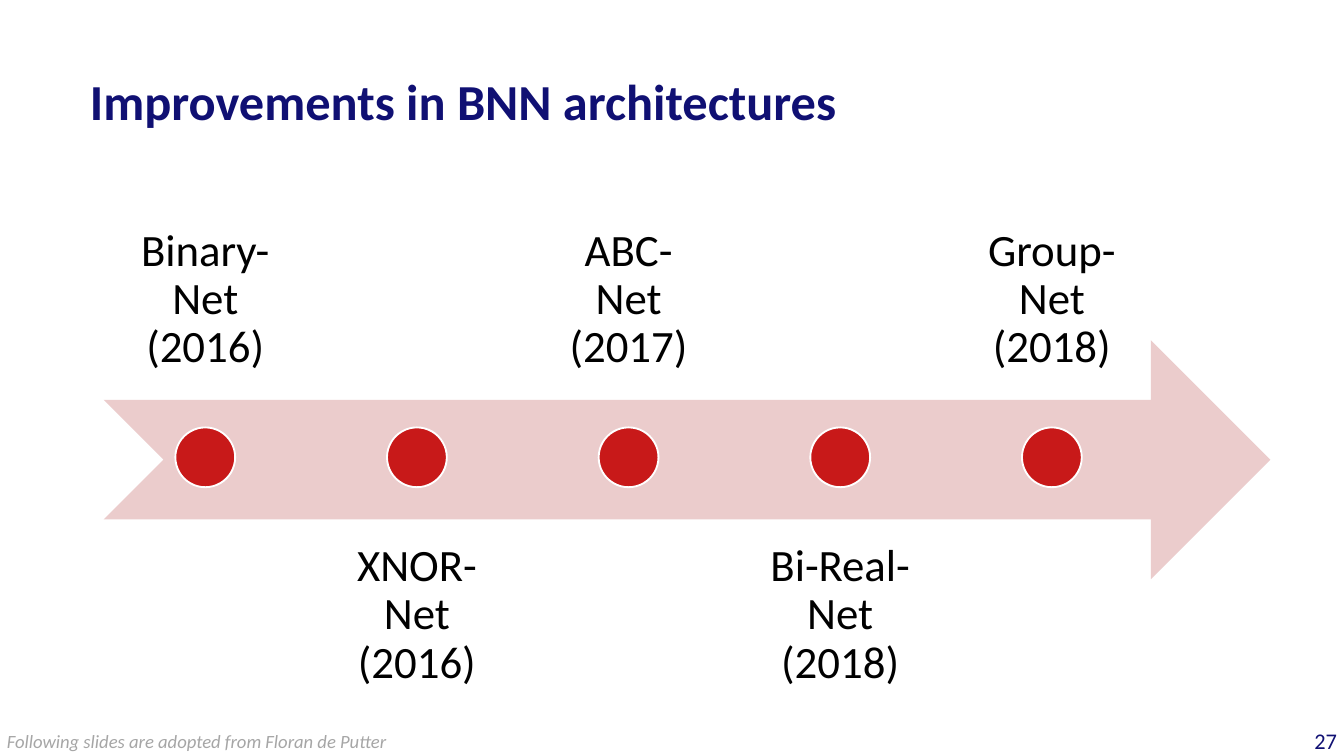
from pptx import Presentation
from pptx.dml.color import RGBColor
from pptx.enum.shapes import MSO_SHAPE
from pptx.enum.text import MSO_ANCHOR, MSO_AUTO_SIZE, PP_ALIGN
from pptx.util import Cm, Pt

NAVY = RGBColor(0x10, 0x10, 0x73)
RED = RGBColor(0xC8, 0x19, 0x19)
PINK = RGBColor(0xEB, 0xCC, 0xCC)
GRAY = RGBColor(0xA6, 0xA6, 0xA6)
BLACK = RGBColor(0, 0, 0)
WHITE = RGBColor(0xFF, 0xFF, 0xFF)


class SlideBuilder:
    font_name = "Calibri"

    def __init__(self, slide):
        self.slide = slide

    def add_text(self, text, left, top, width, height, size, color,
                 margins=(0, 0), frame_format=None, para_format=None,
                 font_format=None):
        box = self.slide.shapes.add_textbox(Cm(left), Cm(top), Cm(width), Cm(height))
        frame = box.text_frame
        para = frame.paragraphs[0]
        span = para.add_run()
        span.text = text
        across, down = (Cm(margin) for margin in margins)
        frame_values = {"word_wrap": True, "margin_left": across, "margin_right": across,
                        "margin_top": down, "margin_bottom": down, **(frame_format or {})}
        font_values = {"name": self.font_name, "size": Pt(size), **(font_format or {})}
        for target, values in ((frame, frame_values), (para, para_format or {}),
                               (span.font, font_values)):
            for name, value in values.items():
                setattr(target, name, value)
        span.font.color.rgb = color
        return box

    def add_shape(self, kind, left, top, width, height, fill, outline=None):
        shape = self.slide.shapes.add_shape(kind, Cm(left), Cm(top), Cm(width), Cm(height))
        shape.shadow.inherit = False
        shape.fill.solid()
        shape.fill.fore_color.rgb = fill
        if outline is None:
            shape.line.fill.background()
        else:
            shape.line.color.rgb = outline
            shape.line.width = Pt(1)
        return shape


def main():
    deck = Presentation()
    deck.slide_width, deck.slide_height = Cm(25.4), Cm(14.29)
    page = SlideBuilder(deck.slides.add_slide(deck.slide_layouts[6]))

    # Title
    page.add_text("Improvements in BNN architectures", 1.7, 1.52, 22, 1.09, 27, NAVY,
                  para_format={"line_spacing": Pt(27)}, font_format={"bold": True})

    # Timeline arrow
    page.add_shape(MSO_SHAPE.NOTCHED_RIGHT_ARROW, 1.96, 6.43, 22.05, 4.52, PINK)

    # Milestones, with labels alternating above and below the arrow
    milestones = ["Binary-Net (2016)", "XNOR-Net (2016)", "ABC-Net (2017)",
                  "Bi-Real-Net (2018)", "Group-Net (2018)"]
    first_center, pitch = 3.88, 4
    label_width, dot_size = 3.81, 1.13
    sides = [(3, MSO_ANCHOR.BOTTOM), (9.78, MSO_ANCHOR.TOP)]
    for index, milestone in enumerate(milestones):
        center = first_center + index * pitch
        label_top, anchor = sides[index % 2]
        page.add_text(milestone, center - label_width / 2, label_top, label_width, 4.52,
                      24, BLACK, margins=(0.48, 0.48),
                      frame_format={"vertical_anchor": anchor},
                      para_format={"alignment": PP_ALIGN.CENTER, "line_spacing": 0.9})
        page.add_shape(MSO_SHAPE.OVAL, center - dot_size / 2, 8.08, dot_size, dot_size,
                       RED, WHITE)

    # Credit and page number
    page.add_text("Following slides are adopted from Floran de Putter",
                  -0.12, 13.67, 7.77, 0.68, 10, GRAY, margins=(0.25, 0.13),
                  frame_format={"word_wrap": False,
                                "auto_size": MSO_AUTO_SIZE.SHAPE_TO_FIT_TEXT},
                  font_format={"italic": True})
    page.add_text("27", 24.13, 13.74, 1.14, 0.53, 12, NAVY,
                  para_format={"alignment": PP_ALIGN.RIGHT})

    deck.save("out.pptx")


if __name__ == "__main__":
    main()
